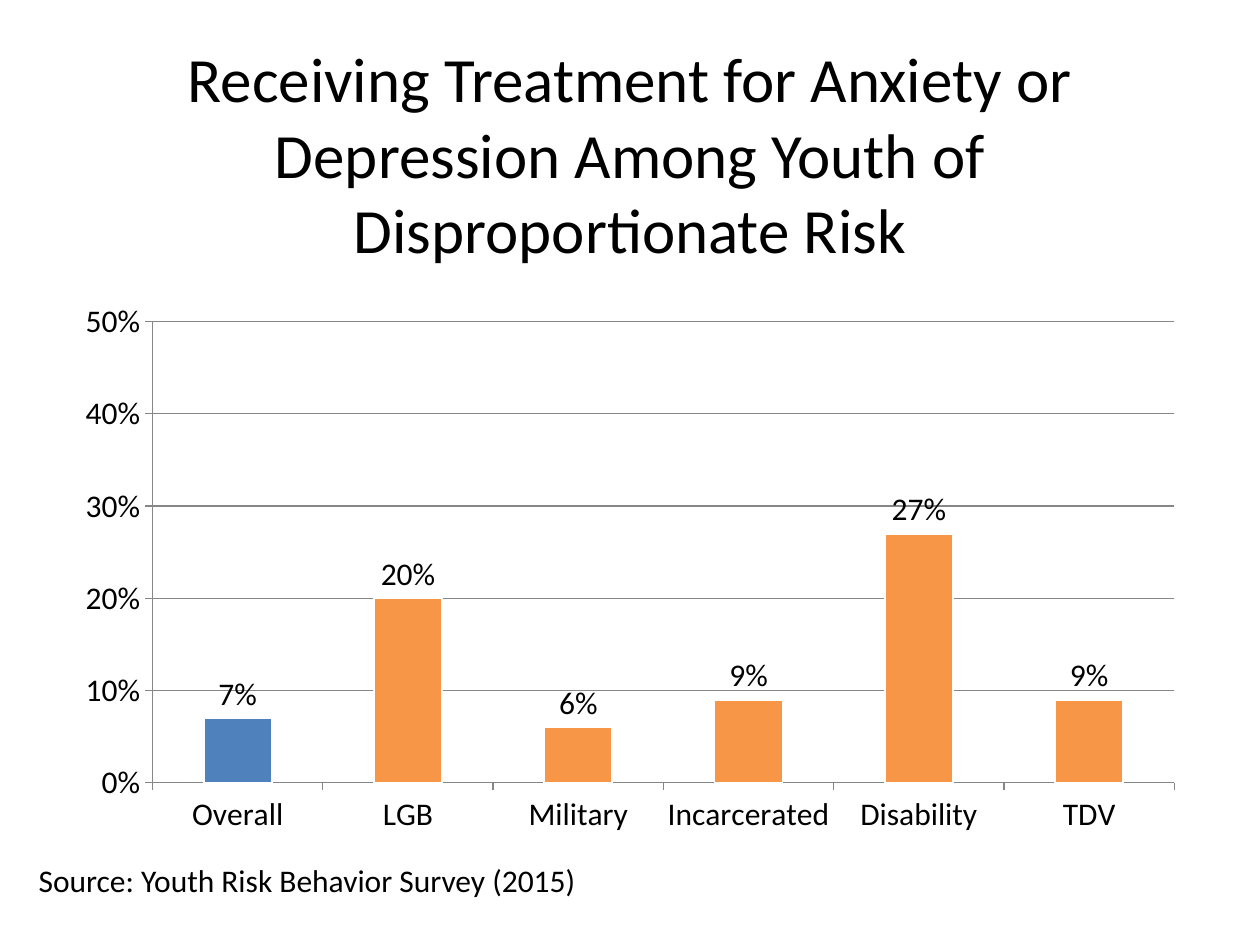
from dataclasses import dataclass
from typing import NamedTuple

from pptx import Presentation
from pptx.chart.data import CategoryChartData
from pptx.dml.color import RGBColor
from pptx.enum.chart import XL_CHART_TYPE, XL_LABEL_POSITION, XL_TICK_MARK
from pptx.enum.text import MSO_ANCHOR, PP_ALIGN
from pptx.util import Pt

COLUMNS = XL_CHART_TYPE.COLUMN_CLUSTERED
ABOVE_BAR = XL_LABEL_POSITION.OUTSIDE_END
TICK_OUT = XL_TICK_MARK.OUTSIDE
TICK_NONE = XL_TICK_MARK.NONE
LEFT, CENTER = PP_ALIGN.LEFT, PP_ALIGN.CENTER
TOP, MIDDLE = MSO_ANCHOR.TOP, MSO_ANCHOR.MIDDLE

FONT = "Calibri"
BLACK = "000000"
WHITE = "FFFFFF"
BLUE = "4F81BD"
ORANGE = "F79646"
GRAY = "868686"


@dataclass
class Caption:
    text: str
    left: float
    top: float
    width: float
    height: float
    size: float
    align: PP_ALIGN
    anchor: MSO_ANCHOR


class YouthGroup(NamedTuple):
    name: str
    share: float
    color: str = ORANGE


CAPTIONS = [
    Caption(
        "Receiving Treatment for Anxiety or Depression Among Youth of "
        "Disproportionate Risk",
        36, 42.5, 648, 90, 36, CENTER, MIDDLE,
    ),
    Caption("Source: Youth Risk Behavior Survey (2015)",
            15, 488.5, 360, 29, 18, LEFT, TOP),
]

GROUPS = [
    YouthGroup("Overall", 0.07, BLUE),
    YouthGroup("LGB", 0.20),
    YouthGroup("Military", 0.06),
    YouthGroup("Incarcerated", 0.09),
    YouthGroup("Disability", 0.27),
    YouthGroup("TDV", 0.09),
]


def rgb(value: str) -> RGBColor:
    return RGBColor.from_string(value)


def style_font(font, size: float) -> None:
    font.name = FONT
    font.size = Pt(size)
    font.bold = False
    font.color.rgb = rgb(BLACK)


def style_line(line, color: str, width: float) -> None:
    line.color.rgb = rgb(color)
    line.width = Pt(width)


def add_caption(slide, caption: Caption) -> None:
    box = slide.shapes.add_textbox(
        Pt(caption.left), Pt(caption.top), Pt(caption.width), Pt(caption.height)
    )
    frame = box.text_frame
    frame.word_wrap = True
    frame.vertical_anchor = caption.anchor
    paragraph = frame.paragraphs[0]
    paragraph.alignment = caption.align
    run = paragraph.add_run()
    run.text = caption.text
    style_font(run.font, caption.size)


def add_treatment_chart(slide, groups: list[YouthGroup]) -> None:
    shares = CategoryChartData(number_format="0%")
    shares.categories = [group.name for group in groups]
    shares.add_series("Series 1", [group.share for group in groups])
    chart = slide.shapes.add_chart(
        COLUMNS, Pt(36), Pt(166.5), Pt(648), Pt(316), shares
    ).chart
    chart.has_legend = False
    chart.has_title = False
    style_font(chart.font, 18)

    share_axis = chart.value_axis
    share_axis.minimum_scale = 0
    share_axis.maximum_scale = 0.5
    share_axis.major_unit = 0.1
    share_axis.tick_labels.number_format = "0%"
    share_axis.tick_labels.number_format_is_linked = False
    share_axis.has_major_gridlines = True
    style_line(share_axis.major_gridlines.format.line, GRAY, 0.75)
    for axis in (chart.category_axis, share_axis):
        axis.major_tick_mark = TICK_OUT
        axis.minor_tick_mark = TICK_NONE
        style_line(axis.format.line, GRAY, 0.75)

    plot = chart.plots[0]
    plot.gap_width = 150
    plot.vary_by_categories = False
    plot.has_data_labels = True
    labels = plot.data_labels
    labels.show_value = True
    labels.number_format = "0%"
    labels.number_format_is_linked = False
    labels.position = ABOVE_BAR
    style_font(labels.font, 18)

    bars = plot.series[0]
    bars.invert_if_negative = False
    for index, group in enumerate(groups):
        bar = bars.points[index].format
        bar.fill.solid()
        bar.fill.fore_color.rgb = rgb(group.color)
        style_line(bar.line, WHITE, 1)


def main() -> None:
    deck = Presentation()
    deck.slide_width = Pt(720)
    deck.slide_height = Pt(540)
    slide = deck.slides.add_slide(deck.slide_layouts[6])
    for caption in CAPTIONS:
        add_caption(slide, caption)
    add_treatment_chart(slide, GROUPS)
    deck.save("out.pptx")


if __name__ == "__main__":
    main()
